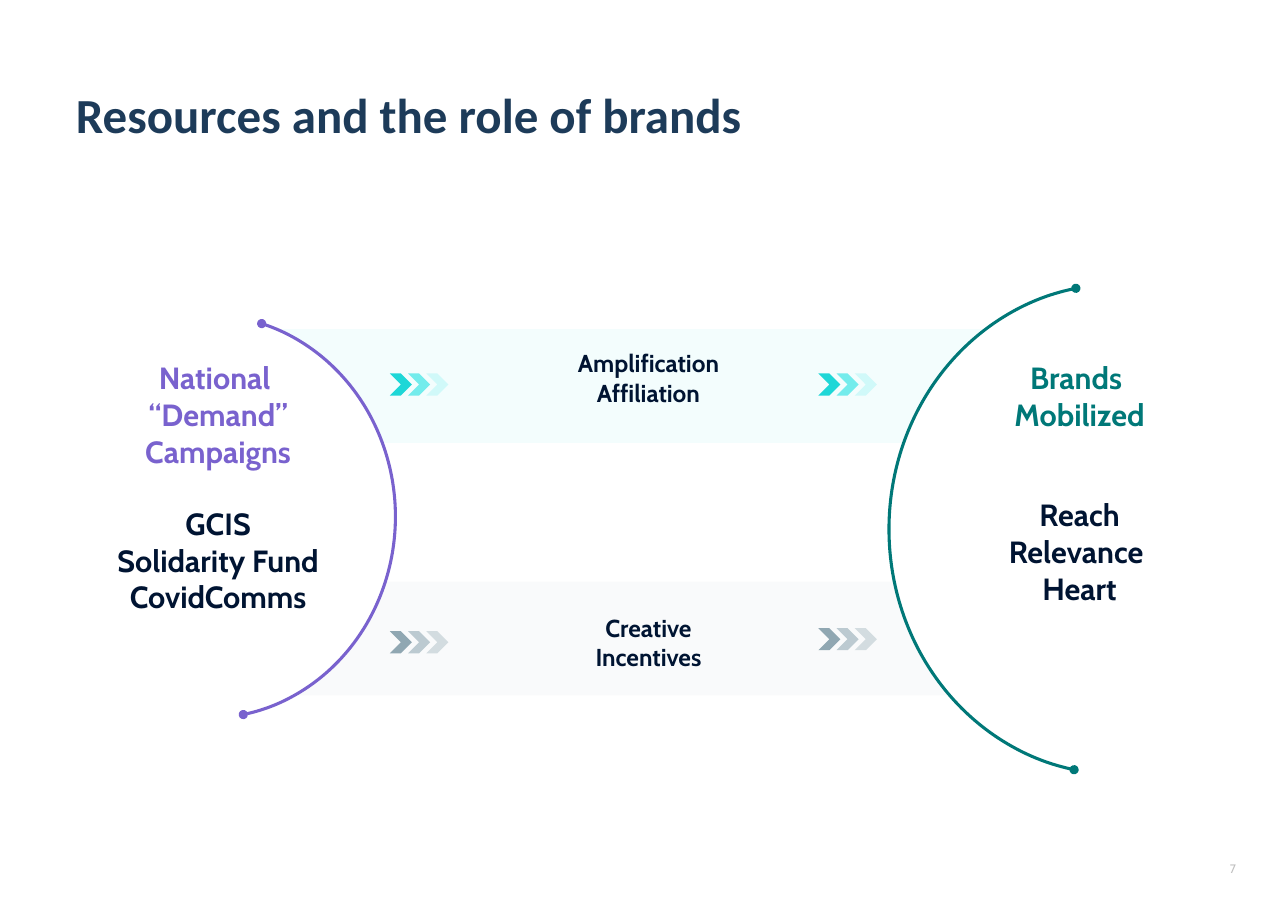
from dataclasses import dataclass

from lxml import etree
from pptx import Presentation
from pptx.dml.color import RGBColor
from pptx.enum.shapes import MSO_SHAPE
from pptx.enum.text import MSO_ANCHOR, MSO_AUTO_SIZE, PP_ALIGN
from pptx.oxml.ns import qn
from pptx.shapes.autoshape import Shape
from pptx.slide import Slide
from pptx.text.text import TextFrame
from pptx.util import Cm, Pt

RECTANGLE, ARC, CHEVRON = MSO_SHAPE.RECTANGLE, MSO_SHAPE.ARC, MSO_SHAPE.CHEVRON
LEFT, CENTER, RIGHT = PP_ALIGN.LEFT, PP_ALIGN.CENTER, PP_ALIGN.RIGHT
TOP, MIDDLE = MSO_ANCHOR.TOP, MSO_ANCHOR.MIDDLE
NO_AUTOFIT = MSO_AUTO_SIZE.NONE
TITLE_ONLY = 5


@dataclass(frozen=True)
class Theme:
    heading_font: str = "Calibri"
    text_font: str = "Cabin"
    title_size: float = 32
    side_size: float = 20
    band_size: float = 16
    number_size: float = 8
    heading: str = "1D3B59"
    ink: str = "001432"
    paper: str = "FFFFFF"
    campaigns: str = "7962CE"
    brands: str = "007878"
    number: str = "BFBFBF"
    turquoise: tuple[str, ...] = ("1ED7D7", "73ECEC", "D0F9F9")
    slate: tuple[str, ...] = ("90A7B2", "BCCAD1", "D3DCE0")
    turquoise_band: str = "D0F9F9"
    slate_band: str = "E9EDF0"


THEME = Theme()


@dataclass(frozen=True)
class Box:
    """Left, top, width and height in centimetres."""
    left: float
    top: float
    width: float
    height: float

    def lengths(self) -> tuple[Cm, Cm, Cm, Cm]:
        return Cm(self.left), Cm(self.top), Cm(self.width), Cm(self.height)


@dataclass(frozen=True)
class Line:
    text: str
    color: str = THEME.ink
    gap: float = 0


@dataclass(frozen=True)
class Band:
    top: float
    color: str
    chevron_colors: tuple[str, ...]
    chevron_tops: tuple[float, float]
    label_top: float
    label: tuple[str, str]


@dataclass(frozen=True)
class Side:
    arc: Box
    start: float
    end: float
    color: str
    text_box: Box
    lines: tuple[Line, ...]


BANDS = (
    Band(13.41, THEME.slate_band, THEME.slate, (14.55, 14.48), 14.0,
         ("Creative", "Incentives")),
    Band(7.59, THEME.turquoise_band, THEME.turquoise, (8.61, 8.61), 7.9,
         ("Amplification", "Affiliation")),
)
CHEVRON_LEFTS = (8.99, 18.87)
CHEVRON_SIZE, CHEVRON_STEP = 0.51, 0.42

SIDES = (
    Side(Box(0.43, 7.26, 8.69, 9.3), 285.82, 79.61, THEME.campaigns,
         Box(1.45, 8.15, 7.16, 6.81),
         (Line("National ", THEME.campaigns), Line("“Demand”", THEME.campaigns),
          Line("Campaigns", THEME.campaigns), Line("GCIS", gap=23.2),
          Line("Solidarity Fund"), Line("CovidComms"))),
    Side(Box(20.5, 6.55, 10.57, 11.3), 100.39, 260.04, THEME.brands,
         Box(21.39, 8.15, 7.01, 5.99),
         (Line("Brands ", THEME.brands), Line("Mobilized", THEME.brands),
          Line("Reach", gap=41.5), Line("Relevance "), Line("Heart"))),
)


def write_lines(frame: TextFrame, lines: tuple[Line, ...], size: float,
                align: PP_ALIGN = CENTER, font: str = THEME.text_font,
                bold: bool = True, anchor: MSO_ANCHOR = TOP,
                inset: tuple[float, float] = (0.25, 0.13)) -> None:
    across, down = (Cm(value) for value in inset)
    frame_format = {"word_wrap": True, "auto_size": NO_AUTOFIT,
                    "vertical_anchor": anchor, "margin_left": across,
                    "margin_right": across, "margin_top": down,
                    "margin_bottom": down}
    for key, value in frame_format.items():
        setattr(frame, key, value)
    font_format = {"name": font, "size": Pt(size), "bold": bold}
    for index, line in enumerate(lines):
        paragraph = frame.add_paragraph() if index else frame.paragraphs[0]
        paragraph.alignment = align
        paragraph.space_before = Pt(line.gap)
        run = paragraph.add_run()
        run.text = line.text
        for key, value in font_format.items():
            setattr(run.font, key, value)
        run.font.color.rgb = RGBColor.from_string(line.color)


def fill_plain(shape: Shape, color: str) -> None:
    shape.shadow.inherit = False
    shape.fill.solid()
    shape.fill.fore_color.rgb = RGBColor.from_string(color)
    shape.line.fill.background()


def draw_band(slide: Slide, band: Band) -> None:
    strip = slide.shapes.add_shape(RECTANGLE, *Box(6.2, band.top, 17.37, 2.62).lengths())
    fill_plain(strip, band.color)
    color = strip.fill._xPr.find(".//" + qn("a:srgbClr"))
    etree.SubElement(color, qn("a:alpha"), val="25000")


def draw_side_arc(slide: Slide, side: Side) -> None:
    arc = slide.shapes.add_shape(ARC, *side.arc.lengths())
    fill_plain(arc, THEME.paper)
    # Adjustments count in 100000ths, arc angles in 60000ths of a degree
    for index, angle in enumerate((side.start, side.end)):
        arc.adjustments[index] = angle * 0.6
    arc.line.color.rgb = RGBColor.from_string(side.color)
    arc.line.width = Pt(2)
    outline = arc.line._get_or_add_ln()
    for end in ("a:headEnd", "a:tailEnd"):
        etree.SubElement(outline, qn(end), type="oval")


def draw_chevrons(slide: Slide, left: float, top: float, colors: tuple[str, ...]) -> None:
    group = slide.shapes.add_group_shape()
    for index, color in enumerate(colors):
        place = Box(left + index * CHEVRON_STEP, top, CHEVRON_SIZE, CHEVRON_SIZE)
        fill_plain(group.shapes.add_shape(CHEVRON, *place.lengths()), color)


def add_text(slide: Slide, box: Box) -> TextFrame:
    return slide.shapes.add_textbox(*box.lengths()).text_frame


def main() -> None:
    prs = Presentation()
    prs.slide_width, prs.slide_height = Cm(29.7), Cm(21)
    slide = prs.slides.add_slide(prs.slide_layouts[TITLE_ONLY])

    # Title
    title = slide.shapes.title
    title.left, title.top, title.width, title.height = Box(1.75, 1.9, 26.19, 1.63).lengths()
    write_lines(title.text_frame, (Line("Resources and the role of brands", THEME.heading),),
                THEME.title_size, LEFT, THEME.heading_font, anchor=MIDDLE, inset=(0, 0))
    title.text_frame.paragraphs[0].line_spacing = 0.9

    # Bands, masked at both ends by the filled arcs
    for band in BANDS:
        draw_band(slide, band)
    for side in SIDES:
        draw_side_arc(slide, side)

    # Band chevrons and labels
    for band in BANDS:
        for left, top in zip(CHEVRON_LEFTS, band.chevron_tops):
            draw_chevrons(slide, left, top, band.chevron_colors)
        write_lines(add_text(slide, Box(7.54, band.label_top, 14.83, 1.63)),
                    tuple(Line(text) for text in band.label), THEME.band_size)

    # Campaigns and brands
    for side in SIDES:
        write_lines(add_text(slide, side.text_box), side.lines, THEME.side_size)

    # Page number
    write_lines(add_text(slide, Box(27.71, 19.86, 0.79, 1.12)), (Line("7", THEME.number),),
                THEME.number_size, RIGHT, bold=False, inset=(0, 0))

    prs.save("out.pptx")


if __name__ == "__main__":
    main()
